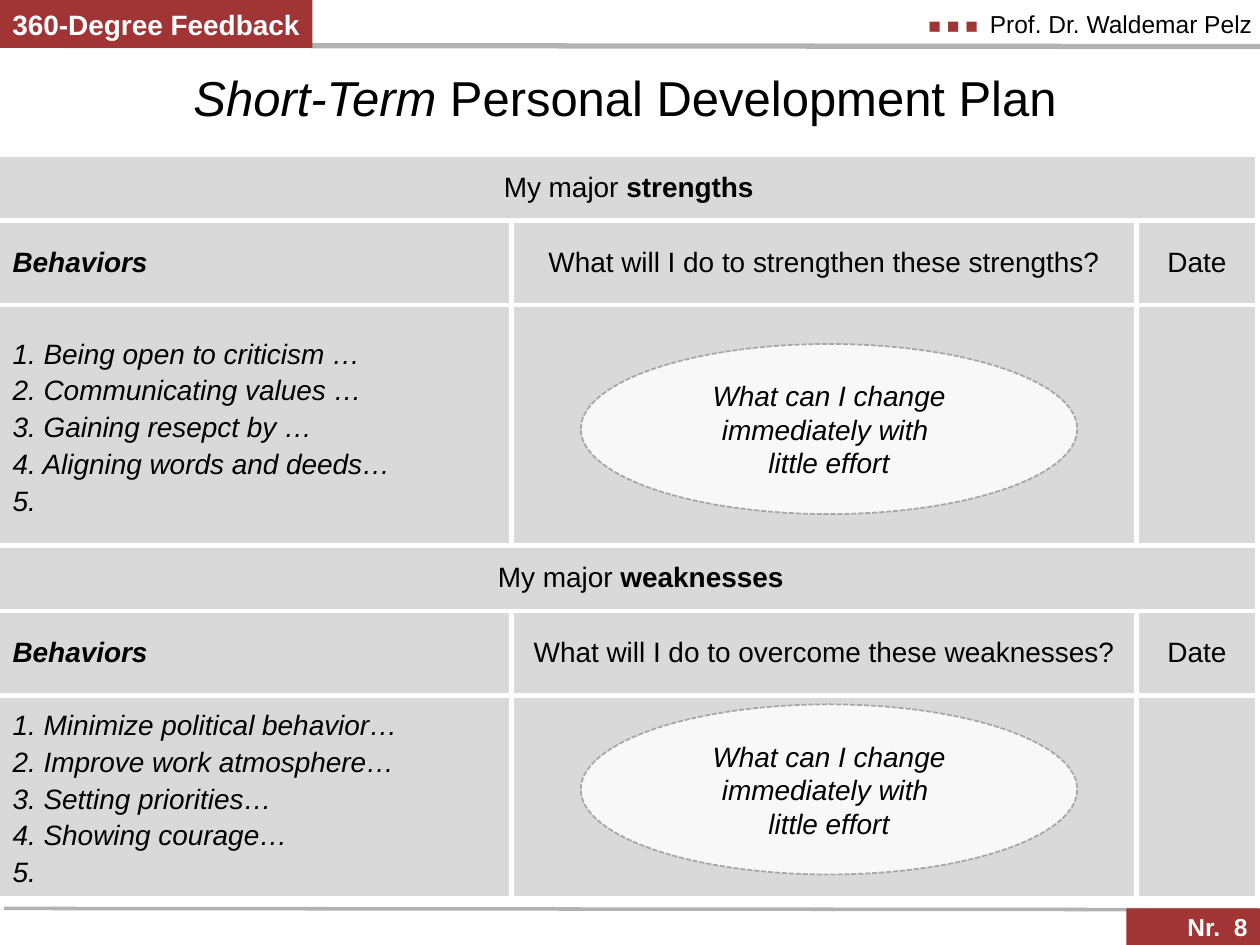
from dataclasses import dataclass

from lxml import etree
from pptx import Presentation
from pptx.dml.color import RGBColor
from pptx.enum.dml import MSO_LINE
from pptx.enum.shapes import MSO_CONNECTOR, MSO_SHAPE
from pptx.enum.text import MSO_ANCHOR, PP_ALIGN
from pptx.oxml.ns import qn
from pptx.util import Inches, Pt

LEFT, CENTER, RIGHT = PP_ALIGN.LEFT, PP_ALIGN.CENTER, PP_ALIGN.RIGHT
MIDDLE, TOP = MSO_ANCHOR.MIDDLE, MSO_ANCHOR.TOP
RECTANGLE, ELLIPSE = MSO_SHAPE.RECTANGLE, MSO_SHAPE.OVAL
STRAIGHT = MSO_CONNECTOR.STRAIGHT
SHORT_DASH = MSO_LINE.SQUARE_DOT


@dataclass(frozen=True)
class Theme:
    font: str = "Arial"
    accent: str = "A13535"
    ink: str = "000000"
    white: str = "FFFFFF"
    rule: str = "B2B2B2"
    cell: str = "D9D9D9"
    bubble: str = "F8F8F8"
    bubble_edge: str = "A6A6A6"
    title_size: int = 28
    body_size: int = 16
    small_size: int = 14
    marker_size: int = 12
    list_spacing: int = 21
    grid_width: int = 3


def rgb(color):
    return RGBColor.from_string(color)


def add_text(paragraph, text, *, font, size, color, bold=False, italic=False):
    for index, line in enumerate(text.split("\n")):
        if index:
            paragraph.add_line_break()
        run = paragraph.add_run()
        run.text = line
        run.font.name = font
        run.font.size = Pt(size)
        run.font.color.rgb = rgb(color)
        run.font.bold = bold
        run.font.italic = italic


class PlanSlide:
    def __init__(self, slide, theme):
        self.slide = slide
        self.theme = theme

    def fill_frame(self, frame, paragraphs, align=LEFT, spacing=None, indent=0):
        for index, runs in enumerate(paragraphs):
            paragraph = frame.add_paragraph() if index else frame.paragraphs[0]
            paragraph.alignment = align
            if spacing:
                paragraph.line_spacing = Pt(spacing)
            if indent:
                paragraph._p.get_or_add_pPr().set("marL", str(Inches(indent)))
            for text, style in runs:
                look = {"font": self.theme.font, "size": self.theme.body_size,
                        "color": self.theme.ink, **style}
                add_text(paragraph, text, **look)

    def rule(self, start, end, width):
        line = self.slide.shapes.add_connector(
            STRAIGHT, *(Inches(value) for value in (*start, *end)))
        line.line.color.rgb = rgb(self.theme.rule)
        line.line.width = Pt(width)
        etree.SubElement(line._element.spPr, qn("a:effectLst"))

    def text(self, box, runs, align, anchor, margins=(0.1, 0.05, 0.1, 0.05)):
        frame = self.slide.shapes.add_textbox(*map(Inches, box)).text_frame
        frame.word_wrap = True
        frame.vertical_anchor = anchor
        (frame.margin_left, frame.margin_top,
         frame.margin_right, frame.margin_bottom) = map(Inches, margins)
        self.fill_frame(frame, [runs], align)

    def shape(self, kind, box, fill):
        shape = self.slide.shapes.add_shape(kind, *map(Inches, box))
        shape.shadow.inherit = False
        shape.fill.solid()
        shape.fill.fore_color.rgb = rgb(fill)
        shape.line.fill.background()
        shape.text_frame.vertical_anchor = MIDDLE
        return shape

    def label(self, box, text, size, align):
        frame = self.shape(RECTANGLE, box, self.theme.accent).text_frame
        frame.word_wrap = False
        style = {"size": size, "color": self.theme.white, "bold": True}
        self.fill_frame(frame, [[(text, style)]], align)

    def bubble(self, top, text):
        bubble = self.shape(ELLIPSE, (4.61, top, 3.94, 1.35), self.theme.bubble)
        bubble.line.color.rgb = rgb(self.theme.bubble_edge)
        bubble.line.width = Pt(1)
        bubble.line.dash_style = SHORT_DASH
        bubble.text_frame.word_wrap = True
        self.fill_frame(bubble.text_frame, [[(text, {"italic": True})]], CENTER)

    def table(self, left, top, widths, heights):
        frame = self.slide.shapes.add_table(
            len(heights), len(widths), Inches(left), Inches(top),
            Inches(sum(widths)), Inches(sum(heights)))
        table = frame.table
        table.first_row = table.horz_banding = False
        for column, width in zip(table.columns, widths):
            column.width = Inches(width)
        for row, height in zip(table.rows, heights):
            row.height = Inches(height)
        for row in range(len(heights)):
            for column in range(len(widths)):
                self.cell_style(table.cell(row, column), column == 0)
        return table

    def cell_style(self, cell, open_left):
        cell.fill.solid()
        cell.fill.fore_color.rgb = rgb(self.theme.cell)
        cell.vertical_anchor = MIDDLE
        properties = cell._tc.get_or_add_tcPr()
        for index, side in enumerate(("lnL", "lnR", "lnT", "lnB")):
            border = etree.Element(qn(f"a:{side}"), w=str(Pt(self.theme.grid_width)))
            if open_left and side == "lnL":
                etree.SubElement(border, qn("a:noFill"))
            else:
                solid = etree.SubElement(border, qn("a:solidFill"))
                etree.SubElement(solid, qn("a:srgbClr"), val=self.theme.white)
            properties.insert(index, border)

    def section(self, table, row, topic, question, behaviors, indent=0):
        heading = table.cell(row, 0)
        heading.merge(table.cell(row, 2))
        self.fill_frame(heading.text_frame,
                        [[("My major ", {}), (topic, {"bold": True})]],
                        CENTER, indent=indent)
        self.fill_frame(table.cell(row + 1, 0).text_frame,
                        [[("Behaviors", {"bold": True, "italic": True})]])
        for column, caption in ((1, question), (2, "Date")):
            self.fill_frame(table.cell(row + 1, column).text_frame,
                            [[(caption, {})]], CENTER)
        numbered = [[(f"{number}. {behavior}".strip(), {"italic": True})]
                    for number, behavior in enumerate(behaviors, 1)]
        self.fill_frame(table.cell(row + 2, 0).text_frame, numbered,
                        spacing=self.theme.list_spacing)


def main():
    theme = Theme()
    deck = Presentation()
    deck.slide_width, deck.slide_height = Inches(10), Inches(7.5)
    plan = PlanSlide(deck.slides.add_slide(deck.slide_layouts[6]), theme)

    plan.rule((0.27, 0.36), (10, 0.37), 3)
    plan.label((0, 0, 2.48, 0.38), "360-Degree Feedback", theme.body_size, LEFT)
    plan.rule((0.03, 7.21), (9.98, 7.22), 2)
    plan.text((7.03, 0.06, 2.91, 0.26),
              [("■ ■ ■  ", {"size": theme.marker_size, "color": theme.accent}),
               ("Prof. Dr. Waldemar Pelz", {"size": theme.small_size})],
              RIGHT, TOP, (0.1, 0.01, 0, 0.01))
    plan.text((0.04, 0.44, 9.84, 0.65),
              [("Short-Term ", {"size": theme.title_size, "italic": True}),
               ("Personal Development Plan", {"size": theme.title_size})],
              CENTER, MIDDLE)

    table = plan.table(0, 1.23, (4.06, 4.96, 0.96),
                       (0.52, 0.67, 1.91, 0.52, 0.67, 1.61))
    plan.section(table, 0, "strengths",
                 "What will I do to strengthen these strengths?",
                 ("Being open to criticism …", "Communicating values …",
                  "Gaining resepct by …", "Aligning words and deeds…", ""))
    plan.section(table, 3, "weaknesses",
                 "What will I do to overcome these weaknesses?",
                 ("Minimize political behavior…", "Improve work atmosphere…",
                  "Setting priorities…", "Showing courage…", ""), indent=0.19)

    for top in (2.73, 5.59):
        plan.bubble(top, "What can I change immediately with \nlittle effort")
    plan.label((8.94, 7.21, 1.06, 0.29), "Nr.  8", theme.small_size, RIGHT)

    deck.save("out.pptx")


if __name__ == "__main__":
    main()
